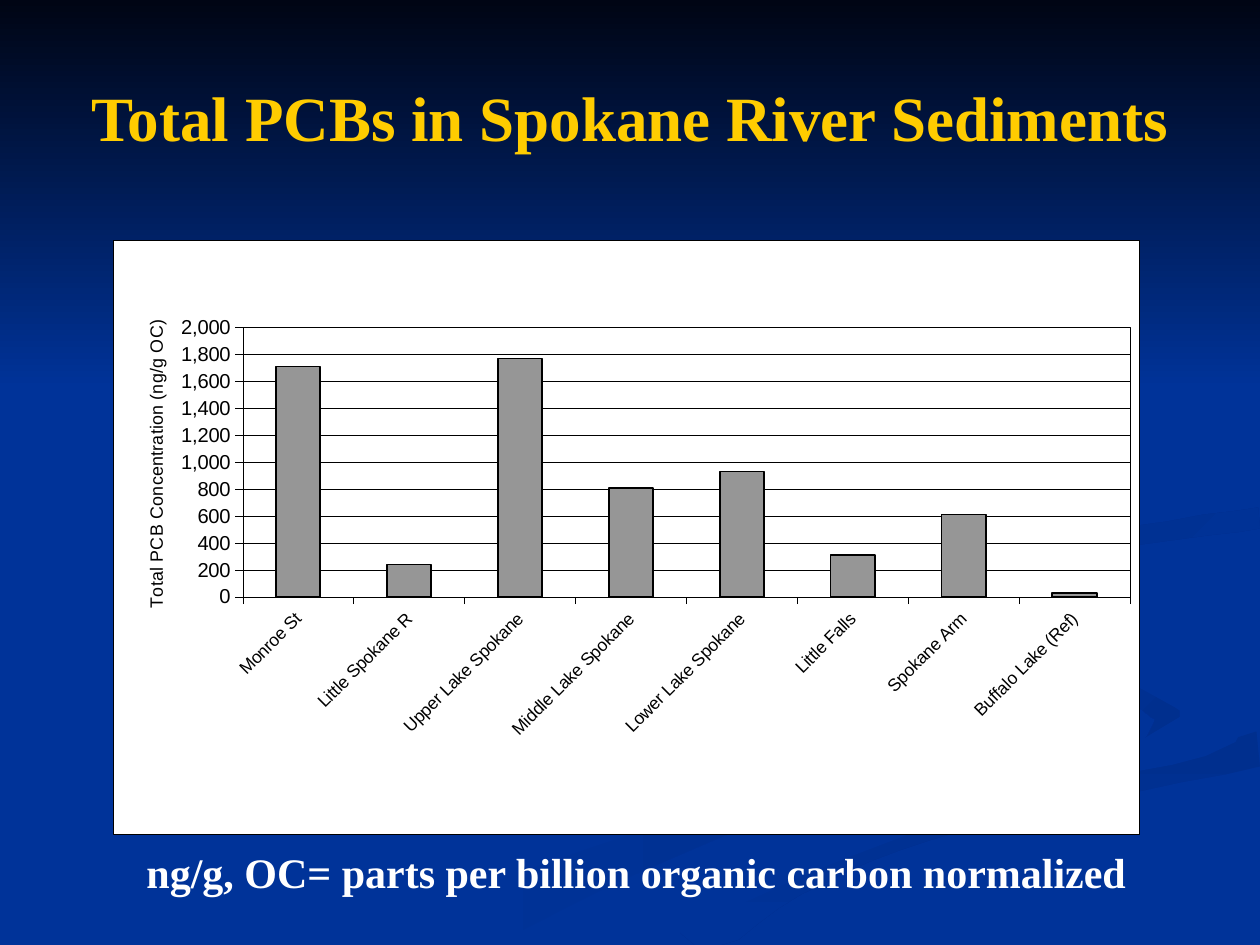
from dataclasses import dataclass
from math import hypot
from typing import Any

from pptx import Presentation
from pptx.chart.data import CategoryChartData
from pptx.dml.color import RGBColor
from pptx.enum.chart import XL_CHART_TYPE as ChartType, XL_TICK_MARK as TickMark
from pptx.enum.text import MSO_ANCHOR as Anchor, PP_ALIGN as Align
from pptx.oxml import parse_xml
from pptx.oxml.ns import nsdecls, qn
from pptx.util import Pt

SLIDE_WIDTH, SLIDE_HEIGHT = 720, 540
WATER, DEEP_WATER, NIGHT, INK = "003399", "002F8E", "000514", "000000"
GOLD, WHITE, GRAY = "FFCC00", "FFFFFF", "969696"
CURVE_STEPS = 6
NS = nsdecls("c", "a")

SITES = {
    "Monroe St": 1710,
    "Little Spokane R": 240,
    "Upper Lake Spokane": 1770,
    "Middle Lake Spokane": 810,
    "Lower Lake Spokane": 930,
    "Little Falls": 310,
    "Spokane Arm": 610,
    "Buffalo Lake (Ref)": 30,
}

# Each station is (x, y, width) along the middle of a ribbon.
LEFT_RIPPLE = [(414, 331, 0), (424, 349, 5), (550, 394, 6), (569, 413, 9),
               (545, 434, 8), (410, 470, 16), (238, 540, 40)]
INNER_RIPPLE = [(521, 334, 0), (560, 367, 8), (620, 384, 11),
                (667, 408, 16), (644, 436, 0)]
LOWER_RIPPLE = [(387, 540, 40), (455, 504, 16), (551, 470, 9), (720, 428, 20)]
RIVER = [(720, 284, 10), (600, 303, 14), (542, 331, 40), (600, 358, 22),
         (699, 405, 36), (605, 448, 4), (480, 486, 10), (353, 540, 18)]
UPPER_RIPPLE = [(595, 357, 0), (572, 341, 14), (610, 314, 10), (720, 296, 13)]
SKY = [(0, 0), (0, 222), (SLIDE_WIDTH, 222), (SLIDE_WIDTH, 0)]

RIPPLES = [
    (LEFT_RIPPLE, (WATER, DEEP_WATER), 0),
    (INNER_RIPPLE, (WATER, DEEP_WATER), 45),
    (LOWER_RIPPLE, (DEEP_WATER, WATER), 90),
    (RIVER, (WATER,), 0),
    (UPPER_RIPPLE, (DEEP_WATER, WATER), 45),
]


def color(hex_string):
    return RGBColor.from_string(hex_string)


def smooth(stations):
    padded = [stations[0], *stations, stations[-1]]
    curve = []
    for before, start, end, after in zip(padded, padded[1:], padded[2:], padded[3:]):
        for step in range(CURVE_STEPS):
            t = step / CURVE_STEPS
            curve.append(tuple(
                b + t * (c - a + t * (2 * a - 5 * b + 4 * c - d + t * (3 * (b - c) + d - a))) / 2
                if t else b
                for a, b, c, d in zip(before, start, end, after)
            ))
    return curve + [stations[-1]]


def ribbon(stations):
    curve = smooth(stations)
    left, right = [], []
    for index, (x, y, width) in enumerate(curve):
        back, ahead = curve[max(index - 1, 0)], curve[min(index + 1, len(curve) - 1)]
        dx, dy = ahead[0] - back[0], ahead[1] - back[1]
        reach = max(width, 0) / 2 / hypot(dx, dy)
        for edge, side in ((left, 1), (right, -1)):
            edge.append((min(x - side * dy * reach, SLIDE_WIDTH),
                         min(y + side * dx * reach, SLIDE_HEIGHT)))
    return left + right[::-1]


def frame_xml(fill):
    return parse_xml(
        f'<c:spPr {NS}>{fill}<a:ln w="3175"><a:solidFill>'
        f'<a:srgbClr val="{INK}"/></a:solidFill></a:ln></c:spPr>'
    )


def layout_xml(target="", **place):
    edges = "".join(f'<c:{name} val="{value}"/>' for name, value in place.items())
    return parse_xml(
        f'<c:layout {NS}><c:manualLayout>{target}<c:xMode val="edge"/>'
        f'<c:yMode val="edge"/>{edges}</c:manualLayout></c:layout>'
    )


def find(chart, *tags):
    return chart.element.find(".//" + "/".join(qn(tag) for tag in tags))


def set_layout(parent, layout, position):
    for old in parent.findall(qn("c:layout")):
        parent.remove(old)
    parent.insert(position, layout)


@dataclass
class Deck:
    slide: Any
    heading_font: str = "Times New Roman"
    chart_font: str = "Arial"

    def background(self):
        self.solid(self.slide.background.fill, WATER)

    def solid(self, fill, shade):
        fill.solid()
        fill.fore_color.rgb = color(shade)

    def outline(self, points, shades, angle):
        builder = self.slide.shapes.build_freeform(*points[0], scale=Pt(1))
        builder.add_line_segments(points[1:], close=True)
        shape = builder.convert_to_shape()
        shape.shadow.inherit = False
        shape.line.fill.background()
        if len(shades) == 1:
            self.solid(shape.fill, shades[0])
            return
        shape.fill.gradient()
        shape.fill.gradient_angle = (360 - angle) % 360
        for stop, shade in zip(shape.fill.gradient_stops, shades):
            stop.color.rgb = color(shade)

    def style_font(self, font, size, shade, name, bold=False):
        font.size, font.name, font.bold = Pt(size), name, bold
        font.color.rgb = color(shade)

    def style_text(self, frame, text, size, shade):
        frame.word_wrap = True
        frame.text = text
        line = frame.paragraphs[0]
        line.alignment = Align.CENTER
        self.style_font(line.runs[0].font, size, shade, self.heading_font, True)

    def title(self, text, left, top, width, height):
        title = self.slide.shapes.title
        title.left, title.top = Pt(left), Pt(top)
        title.width, title.height = Pt(width), Pt(height)
        title.text_frame.vertical_anchor = Anchor.MIDDLE
        self.style_text(title.text_frame, text, 36, GOLD)
        self.slide.shapes.element.append(title.element)

    def caption(self, text, left, top, width, height):
        box = self.slide.shapes.add_textbox(Pt(left), Pt(top), Pt(width), Pt(height))
        self.style_text(box.text_frame, text, 24, WHITE)

    def thin_line(self, line, width=0.25):
        line.width = Pt(width)
        line.color.rgb = color(INK)

    def column_chart(self, values, left, top, width, height):
        data = CategoryChartData()
        data.categories = list(values)
        data.add_series("Series 1", list(values.values()))
        chart = self.slide.shapes.add_chart(
            ChartType.COLUMN_CLUSTERED, Pt(left), Pt(top), Pt(width), Pt(height), data
        ).chart
        chart.has_legend = chart.has_title = False
        self.style_font(chart.font, 10.2, INK, self.chart_font)
        plot = chart.plots[0]
        plot.gap_width, plot.vary_by_categories = 150, False
        columns = plot.series[0].format
        self.solid(columns.fill, GRAY)
        self.thin_line(columns.line, 1)
        return chart

    def chart_axes(self, chart, heading, maximum, step):
        sites, concentration = chart.category_axis, chart.value_axis
        for axis, size in ((sites, 10), (concentration, 11.5)):
            axis.major_tick_mark = TickMark.OUTSIDE
            axis.minor_tick_mark = TickMark.NONE
            self.style_font(axis.tick_labels.font, size, INK, self.chart_font)
            self.thin_line(axis.format.line)
        concentration.minimum_scale, concentration.maximum_scale = 0, maximum
        concentration.major_unit = step
        concentration.tick_labels.number_format = "#,##0"
        concentration.tick_labels.number_format_is_linked = False
        self.thin_line(concentration.major_gridlines.format.line)
        frame = concentration.axis_title.text_frame
        frame.text = heading
        self.style_font(frame.paragraphs[0].runs[0].font, 10.2, INK, self.chart_font)
        for tags, degrees in ((("c:catAx", "c:txPr"), -45),
                              (("c:valAx", "c:title", "c:tx", "c:rich"), -90)):
            body = find(chart, *tags, "a:bodyPr")
            body.set("rot", str(degrees * 60000))
            body.set("vert", "horz")

    def chart_frame(self, chart):
        white = f'<a:solidFill><a:srgbClr val="{WHITE}"/></a:solidFill>'
        chart.element.find(qn("c:txPr")).addprevious(frame_xml(white))
        area = find(chart, "c:plotArea")
        area.append(frame_xml("<a:noFill/>"))
        inner = '<c:layoutTarget val="inner"/>'
        set_layout(area, layout_xml(inner, x=0.126, y=0.147, w=0.865, h=0.453), 0)
        set_layout(find(chart, "c:valAx", "c:title"), layout_xml(x=0.026, y=0.128), 1)


def main():
    prs = Presentation()
    prs.slide_width, prs.slide_height = Pt(SLIDE_WIDTH), Pt(SLIDE_HEIGHT)
    deck = Deck(prs.slides.add_slide(prs.slide_layouts[5]))
    deck.background()
    for stations, shades, angle in RIPPLES:
        deck.outline(ribbon(stations), shades, angle)
    deck.outline(SKY, (NIGHT, WATER), 90)
    deck.title("Total PCBs in Spokane River Sediments", 36, 21.6, 648, 90)
    chart = deck.column_chart(SITES, 64.8, 137.2, 586.4, 339.8)
    deck.chart_axes(chart, "Total PCB Concentration (ng/g OC)", 2000, 200)
    deck.chart_frame(chart)
    deck.caption("ng/g, OC= parts per billion organic carbon normalized", 65.5, 480.2, 596.2, 36)
    prs.save("out.pptx")


if __name__ == "__main__":
    main()
